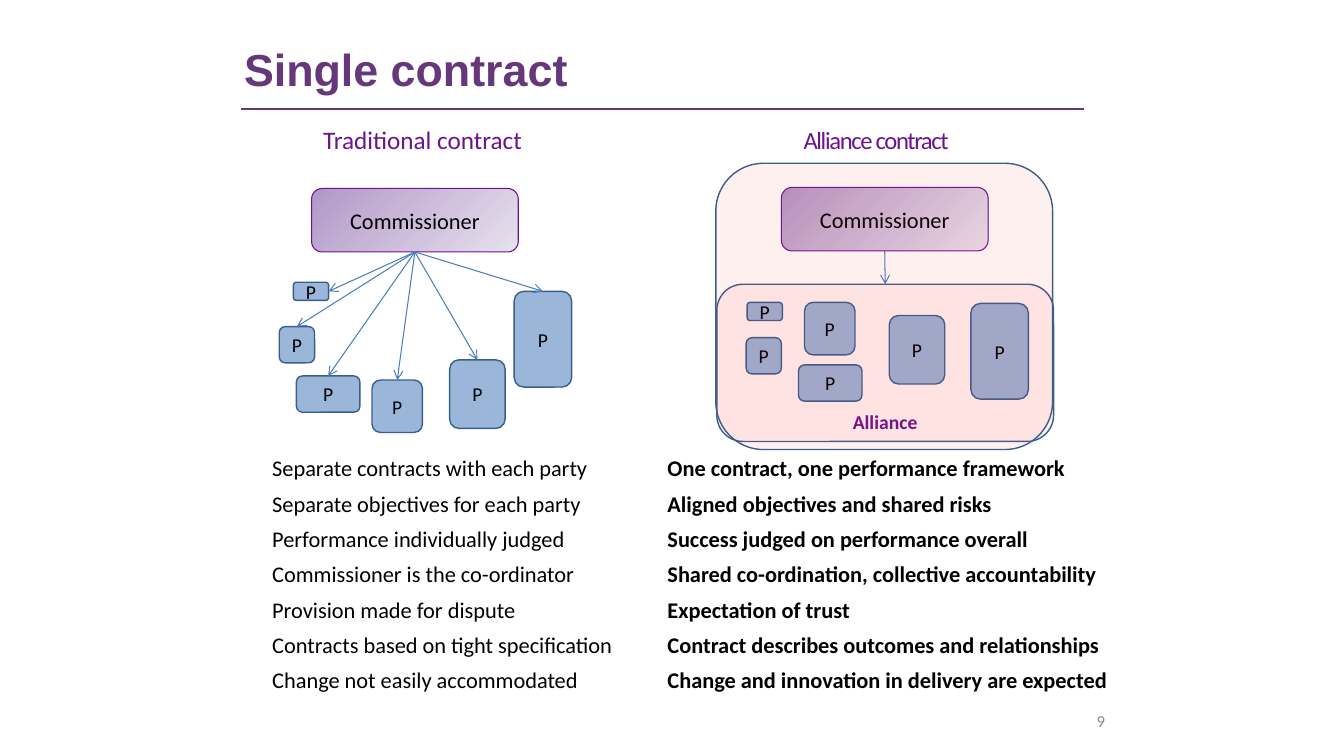
import pptx
import pptx.dml.color
import pptx.enum.shapes
import pptx.enum.text
import pptx.oxml.ns
import pptx.oxml.xmlchemy
import pptx.util

Inches = pptx.util.Inches
Pt = pptx.util.Pt
RGBColor = pptx.dml.color.RGBColor
ALIGN = pptx.enum.text.PP_ALIGN
ANCHOR = pptx.enum.text.MSO_ANCHOR
AUTO_SIZE = pptx.enum.text.MSO_AUTO_SIZE
ROUNDED = pptx.enum.shapes.MSO_SHAPE.ROUNDED_RECTANGLE
STRAIGHT = pptx.enum.shapes.MSO_CONNECTOR.STRAIGHT
OxmlElement = pptx.oxml.xmlchemy.OxmlElement
qn = pptx.oxml.ns.qn

BLACK = RGBColor(0x00, 0x00, 0x00)
GREY = RGBColor(0x8C, 0x8C, 0x8C)
TITLE_PURPLE = RGBColor(0x66, 0x37, 0x7A)
PURPLE = RGBColor(0x6C, 0x13, 0x8F)
LILAC = RGBColor(0xB2, 0x97, 0xC8)
PALE_LILAC = RGBColor(0xE7, 0xE1, 0xED)
BLUE = RGBColor(0x4F, 0x81, 0xBD)
DARK_BLUE = RGBColor(0x3A, 0x5F, 0x8C)
ARROW_BLUE = RGBColor(0x4B, 0x7E, 0xBC)
RED = RGBColor(0xFF, 0x33, 0x33)

TOP, BOTTOM, RIGHT = 0, 2, 3

PROVIDERS = [
    {"size": (0.63, 0.36), "separate": (2.94, 3.73), "allied": (7.92, 3.62), "site": TOP},
    {"size": (0.35, 0.18), "separate": (2.91, 2.8), "allied": (7.41, 3), "site": RIGHT},
    {"size": (0.5, 0.52), "separate": (3.69, 3.77), "allied": (7.98, 3), "site": TOP},
    {"size": (0.55, 0.68), "separate": (4.46, 3.57), "allied": (8.82, 3.13), "site": TOP},
    {"size": (0.57, 0.95), "separate": (5.1, 2.89), "allied": (9.63, 3.01), "site": TOP},
    {"size": (0.35, 0.36), "separate": (2.77, 3.24), "allied": (7.4, 3.35), "site": TOP},
]
TRADITIONAL_POINTS = [
    "Separate contracts with each party",
    "Separate objectives for each party",
    "Performance individually judged",
    "Commissioner is the co-ordinator",
    "Provision made for dispute",
    "Contracts based on tight specification",
    "Change not easily accommodated",
]
ALLIANCE_POINTS = [
    "One contract, one performance framework",
    "Aligned objectives and shared risks",
    "Success judged on performance overall",
    "Shared co-ordination, collective accountability",
    "Expectation of trust",
    "Contract describes outcomes and relationships",
    "Change and innovation in delivery are expected",
]


def apply_format(obj, values):
    """Set each named attribute of an object."""
    for name, value in values.items():
        setattr(obj, name, value)


def write_text(sp, lines, size, color=BLACK, bold=False, font="Calibri",
               align=ALIGN.CENTER, anchor=ANCHOR.MIDDLE, wrap=True, after=0):
    """Fill a shape with formatted paragraphs."""
    tf = sp.text_frame
    apply_format(tf, {"auto_size": AUTO_SIZE.NONE, "word_wrap": wrap,
                      "vertical_anchor": anchor})
    for i, line in enumerate(lines):
        p = tf.paragraphs[0] if i == 0 else tf.add_paragraph()
        apply_format(p, {"alignment": align, "space_before": Pt(0),
                         "space_after": Pt(after), "line_spacing": 1.0})
        r = p.add_run()
        r.text = line
        apply_format(r.font, {"name": font, "size": Pt(size), "bold": bold})
        r.font.color.rgb = color


def fill_placeholder(sp, box, lines, size, **text_format):
    """Move a placeholder and write its text without bullets."""
    names = ("left", "top", "width", "height")
    apply_format(sp, dict(zip(names, map(Inches, box))))
    write_text(sp, lines, size, **text_format)
    for p in sp.text_frame.paragraphs:
        ppr = p._p.get_or_add_pPr()
        ppr.set("marL", "0")
        ppr.set("indent", "0")
        ppr.append(OxmlElement("a:buNone"))


def add_box(shapes, box, line_color, line_width):
    """Add a rounded rectangle with an outline."""
    sp = shapes.add_shape(ROUNDED, *map(Inches, box))
    sp.shadow.inherit = False
    sp.line.color.rgb = line_color
    sp.line.width = Pt(line_width)
    return sp


def add_tinted_box(shapes, box, color, opacity):
    """Add a rounded rectangle with a see-through fill."""
    sp = add_box(shapes, box, DARK_BLUE, 1)
    sp.fill.solid()
    sp.fill.fore_color.rgb = color
    alpha = OxmlElement("a:alpha")
    alpha.set("val", str(opacity * 1000))
    sp._element.spPr.find(qn("a:solidFill"))[0].append(alpha)
    return sp


def add_commissioner(shapes, left, top):
    """Add the gradient commissioner box."""
    sp = add_box(shapes, (left, top, 2.05, 0.63), PURPLE, 0.75)
    sp.fill.gradient()
    sp.fill.gradient_angle = 315
    for stop, color in zip(sp.fill.gradient_stops, (LILAC, PALE_LILAC)):
        stop.color.rgb = color
    write_text(sp, ["Commissioner"], 16)
    return sp


def add_providers(shapes, place):
    """Add every provider box at its position for one contract type."""
    boxes = []
    for provider in PROVIDERS:
        sp = add_tinted_box(shapes, provider[place] + provider["size"], BLUE, 57)
        write_text(sp, ["P"], 14)
        boxes.append(sp)
    return boxes


def add_line(shapes, ends, color, width):
    """Add a straight line without a shadow."""
    line = shapes.add_connector(STRAIGHT, *map(Inches, ends))
    line.line.color.rgb = color
    line.line.width = Pt(width)
    line._element.spPr.append(OxmlElement("a:effectLst"))
    return line


def add_arrow(shapes, source, target, site):
    """Join the bottom of one box to a side of another with an arrow."""
    arrow = add_line(shapes, (0, 0, 0, 0), ARROW_BLUE, 0.75)
    arrow.begin_connect(source, BOTTOM)
    arrow.end_connect(target, site)
    tail = OxmlElement("a:tailEnd")
    tail.set("type", "arrow")
    arrow._element.spPr.find(qn("a:ln")).append(tail)


def add_traditional(shapes):
    """Draw the commissioner with separately contracted providers."""
    commissioner = add_commissioner(shapes, 3.09, 1.87)
    for provider, sp in zip(PROVIDERS, add_providers(shapes, "separate")):
        add_arrow(shapes, commissioner, sp, provider["site"])


def add_alliance(shapes):
    """Draw the commissioner and providers inside one alliance."""
    alliance = add_tinted_box(shapes, (7.11, 2.82, 3.34, 1.56), RED, 7)
    write_text(alliance, ["Alliance"], 14, PURPLE, True, anchor=ANCHOR.BOTTOM)
    alliance.text_frame.margin_bottom = 0
    add_arrow(shapes, add_commissioner(shapes, 7.75, 1.86), alliance, TOP)
    add_providers(shapes.add_group_shape().shapes, "allied")
    add_tinted_box(shapes, (7.1, 1.62, 3.34, 2.84), RED, 7)


def main():
    """Build the slide and save it."""
    prs = pptx.Presentation()
    apply_format(prs, {"slide_width": Inches(13.33), "slide_height": Inches(7.5)})
    s = prs.slides.add_slide(prs.slide_layouts[4])
    title, left_head, left_list, right_head, right_list = s.placeholders
    list_format = {"align": ALIGN.LEFT, "anchor": ANCHOR.TOP, "after": 6}
    fill_placeholder(title, (2.32, 0.36, 3.44, 0.64), ["Single contract"], 32,
                     color=TITLE_PURPLE, bold=True, font="Arial",
                     align=ALIGN.LEFT, wrap=False)
    fill_placeholder(left_head, (2.17, 0.84, 4.04, 1.08),
                     ["Traditional contract"], 18, color=PURPLE)
    fill_placeholder(right_head, (6.52, 0.85, 4.34, 1.08),
                     ["Alliance contract"], 17.6, color=PURPLE)
    right_head.text_frame.paragraphs[0].runs[0].font._element.set("spc", "-100")
    fill_placeholder(left_list, (2.6, 4.46, 3.71, 2.49), TRADITIONAL_POINTS, 16,
                     **list_format)
    fill_placeholder(right_list, (6.52, 4.46, 4.65, 2.49), ALLIANCE_POINTS, 16,
                     bold=True, **list_format)
    add_line(s.shapes, (2.39, 1.08, 10.75, 1.08), TITLE_PURPLE, 1)
    add_traditional(s.shapes)
    add_alliance(s.shapes)
    number = s.shapes.add_textbox(*map(Inches, (9.42, 6.95, 3, 0.4)))
    write_text(number, ["9"], 12, GREY)
    prs.save("out.pptx")


if __name__ == "__main__":
    main()
